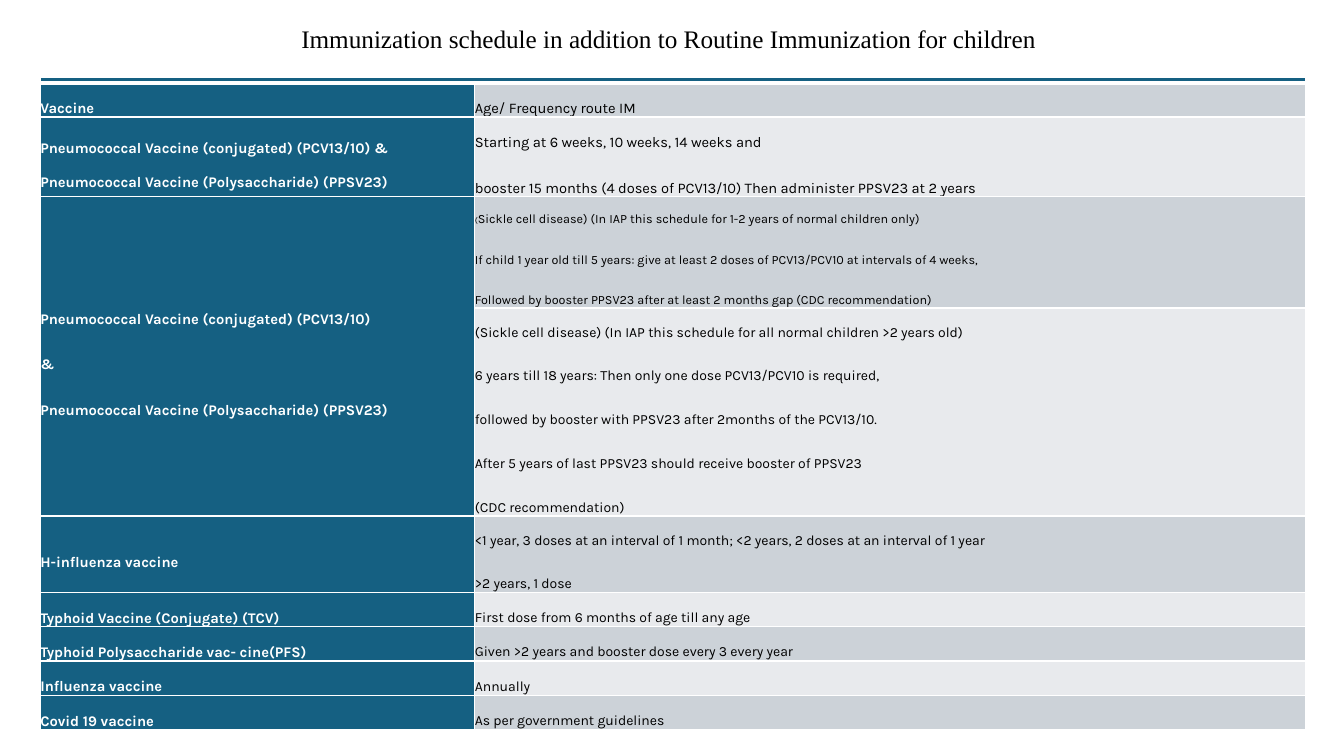
"""Build the slide with the children's immunization schedule."""
from dataclasses import dataclass

from lxml.etree import SubElement
from pptx import Presentation
from pptx.dml.color import RGBColor
from pptx.enum.text import MSO_ANCHOR
from pptx.oxml.ns import qn
from pptx.util import Inches, Pt


@dataclass(frozen=True)
class Theme:
    teal: str = "156082"
    white: str = "FFFFFF"
    black: str = "000000"
    bands: tuple[str, str] = ("E8EAED", "CCD2D8")
    body: str = "Karla"
    serif: str = "Times New Roman"
    title: float = 18
    large: float = 10.5
    mid: float = 10
    small: float = 9
    tiny: float = 6
    strip: float = 1
    thin: float = 1
    thick: float = 3


THEME = Theme()


@dataclass(frozen=True)
class Run:
    text: str
    size: float
    color: str
    bold: bool = False
    font: str = THEME.body


@dataclass(frozen=True)
class Row:
    height: float
    names: tuple[str, ...]
    doses: tuple[str, ...]
    size: float = THEME.mid
    lead: str = ""


ROWS = (
    Row(0.22, ("Vaccine",), ("Age/ Frequency route IM",), THEME.large),
    Row(0.54,
        ("Pneumococcal Vaccine (conjugated) (PCV13/10) & "
         "Pneumococcal Vaccine (Polysaccharide) (PPSV23)",),
        ("Starting at 6 weeks, 10 weeks, 14 weeks and",
         "booster 15 months (4 doses of PCV13/10) Then administer PPSV23 at 2 years"),
        THEME.large),
    Row(0.77,
        ("Pneumococcal Vaccine (conjugated) (PCV13/10)", "&",
         "Pneumococcal Vaccine (Polysaccharide) (PPSV23)"),
        ("Sickle cell disease) (In IAP this schedule for 1-2 years of normal children only)",
         "If child 1 year old till 5 years: give at least 2 doses of PCV13/PCV10 "
         "at intervals of 4 weeks,",
         "Followed by booster PPSV23 after at least 2 months gap (CDC recommendation)"),
        THEME.small, "("),
    Row(1.46, (),
        ("(Sickle cell disease) (In IAP this schedule for all normal children >2 years old)",
         "6 years till 18 years: Then only one dose PCV13/PCV10 is required,",
         "followed by booster with PPSV23 after 2months of the PCV13/10.",
         "After 5 years of last PPSV23 should receive booster of PPSV23",
         "(CDC recommendation)")),
    Row(0.52, ("H-influenza vaccine",),
        ("<1 year, 3 doses at an interval of 1 month; <2 years, 2 doses at an interval of 1 year",
         ">2 years, 1 dose")),
    Row(0.22, ("Typhoid Vaccine (Conjugate) (TCV)",),
        ("First dose from 6 months of age till any age",)),
    Row(0.22, ("Typhoid Polysaccharide vac- cine(PFS)",),
        ("Given >2 years and booster dose every 3 every year",)),
    Row(0.22, ("Influenza vaccine",), ("Annually",)),
    Row(0.22, ("Covid 19 vaccine",), ("As per government guidelines",)),
)


def add_run(para, item: Run) -> None:
    """Add one styled run to a paragraph."""
    run = para.add_run()
    run.text = item.text
    run.font.size = Pt(item.size)
    run.font.name = item.font
    run.font.bold = item.bold
    run.font.color.rgb = RGBColor.from_string(item.color)


def style_cell(cell, fill: str, top: float, base: float) -> None:
    """Set the borders, fill, insets and anchor of a cell."""
    props = cell._tc.get_or_add_tcPr()
    sides = {"lnL": THEME.thin, "lnR": THEME.thin, "lnT": top, "lnB": base}
    for side, width in sides.items():
        line = SubElement(props, qn(f"a:{side}"), w=str(Pt(width)))
        paint = SubElement(line, qn("a:solidFill"))
        SubElement(paint, qn("a:srgbClr"), val=THEME.white)
    cell.fill.solid()
    cell.fill.fore_color.rgb = RGBColor.from_string(fill)
    cell.margin_left = cell.margin_right = cell.margin_top = cell.margin_bottom = 0
    cell.vertical_anchor = MSO_ANCHOR.MIDDLE


def fill_text(cell, lines: list[list[Run]]) -> None:
    """Write lines of runs into a cell, one paragraph each."""
    frame = cell.text_frame
    for pos, line in enumerate(lines):
        para = frame.add_paragraph() if pos else frame.paragraphs[0]
        para.line_spacing = 2.0
        para.space_after = Pt(8)
        for item in line:
            add_run(para, item)


def add_title(slide) -> None:
    """Add the slide title."""
    box = slide.shapes.add_textbox(Inches(2.89), Inches(0.18), Inches(9.14), Inches(0.71))
    box.text_frame.word_wrap = True
    text = "Immunization schedule in addition to Routine Immunization for children"
    add_run(box.text_frame.paragraphs[0],
            Run(text, THEME.title, THEME.black, font=THEME.serif))


def add_grid(slide) -> None:
    """Add the vaccine table with its top strip."""
    frame = slide.shapes.add_table(len(ROWS) + 1, 2, Inches(0.4), Inches(0.77),
                                   Inches(12.54), Inches(6.3))
    table = frame.table
    table.first_row = table.horz_banding = False
    for col, width in zip(table.columns, (4.31, 8.24)):
        col.width = Inches(width)
    table.rows[0].height = Inches(0.05)
    for cell in table.rows[0].cells:
        style_cell(cell, THEME.teal, THEME.thin, THEME.thick)
        SubElement(cell.text_frame.paragraphs[0]._p, qn("a:endParaRPr"),
                   sz=str(int(THEME.strip * 100)))
    table.cell(0, 0).merge(table.cell(0, 1))
    for pos, row in enumerate(ROWS, 1):
        table.rows[pos].height = Inches(row.height)
        top = THEME.thick if pos == 1 else THEME.thin
        left, right = table.cell(pos, 0), table.cell(pos, 1)
        style_cell(left, THEME.teal, top, THEME.thin)
        style_cell(right, THEME.bands[pos % 2], top, THEME.thin)
        fill_text(left, [[Run(name, THEME.large, THEME.white, True)] for name in row.names])
        doses = [[Run(dose, row.size, THEME.black)] for dose in row.doses]
        if row.lead:
            doses[0].insert(0, Run(row.lead, THEME.tiny, THEME.black))
        fill_text(right, doses)
        if not row.names:
            table.cell(pos - 1, 0).merge(left)
    frame.height = Inches(6.3)


def main() -> None:
    """Build and save the deck."""
    deck = Presentation()
    deck.slide_width, deck.slide_height = Inches(13.33), Inches(7.5)
    slide = deck.slides.add_slide(deck.slide_layouts[6])
    add_grid(slide)
    add_title(slide)
    deck.save("out.pptx")


if __name__ == "__main__":
    main()
